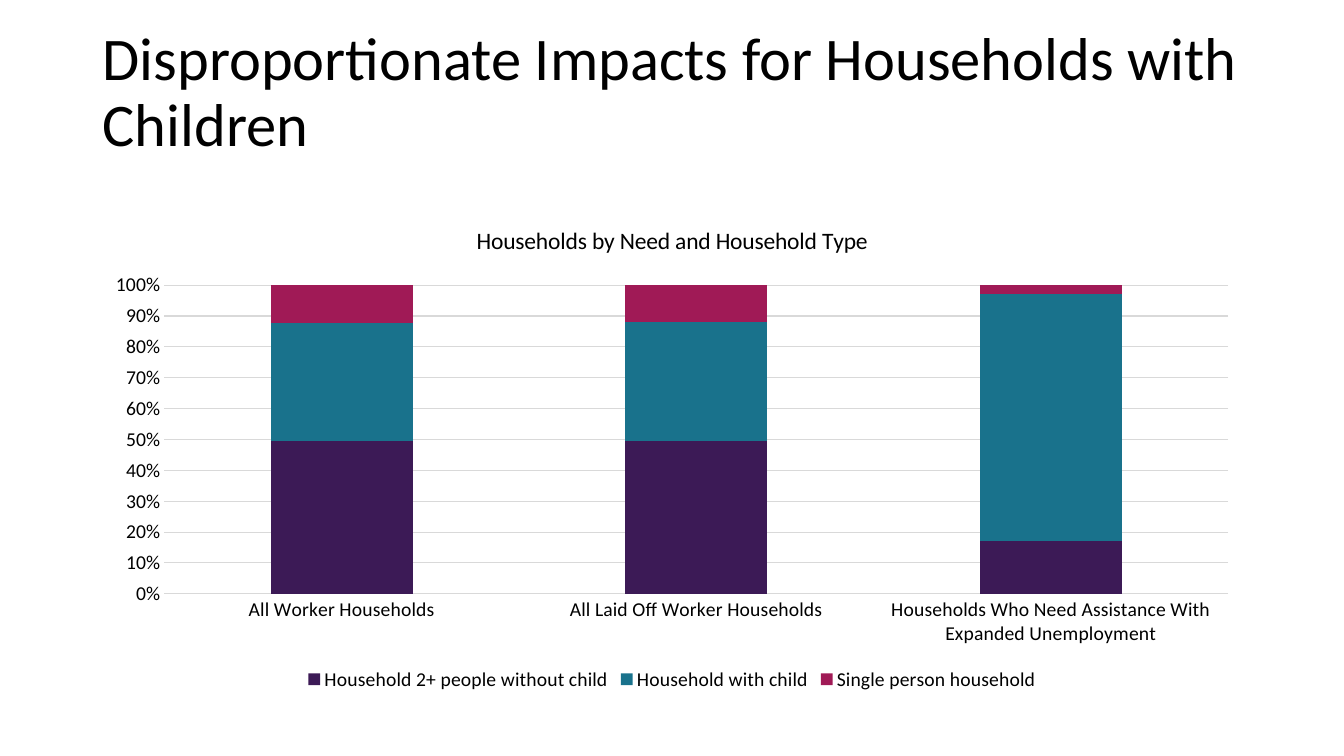
from pptx import Presentation
from pptx.chart.data import CategoryChartData
from pptx.dml.color import RGBColor
from pptx.enum.chart import XL_CHART_TYPE, XL_LEGEND_POSITION, XL_TICK_MARK
from pptx.enum.text import MSO_ANCHOR
from pptx.util import Inches, Pt

COLORS = {
    "text": "000000",
    "grid": "D9D9D9",
    "without_child": "3C1A56",
    "with_child": "19728C",
    "single": "A01A56",
}

HOUSEHOLDS = [
    "All Worker Households",
    "All Laid Off Worker Households",
    "Households Who Need Assistance With Expanded Unemployment",
]
HOUSEHOLD_TYPES = [
    ("Household 2+ people without child", (49, 50, 17), "without_child"),
    ("Household with child", (38, 39, 80), "with_child"),
    ("Single person household", (12, 12, 3), "single"),
]


def color(name):
    return RGBColor.from_string(COLORS[name])


def style_font(font, size, fill="text", name="Calibri", bold=False):
    font.size = Pt(size)
    font.name = name
    font.bold = bold
    font.color.rgb = color(fill)


def write(frame, text, size, line_spacing=None, **style):
    paragraph = frame.paragraphs[0]
    paragraph.line_spacing = line_spacing
    run = paragraph.add_run()
    run.text = text
    style_font(run.font, size, **style)


class HouseholdSlide:
    """Places elements by shares of the slide's width and height."""

    def __init__(self, deck, label_size=14):
        self.width, self.height = deck.slide_width, deck.slide_height
        self.slide = deck.slides.add_slide(deck.slide_layouts[6])
        self.label_size = label_size

    def area(self, left, top, width, height):
        return (int(left * self.width), int(top * self.height),
                int(width * self.width), int(height * self.height))

    def heading(self, text, area, size):
        frame = self.slide.shapes.add_textbox(*self.area(*area)).text_frame
        frame.word_wrap = True
        frame.vertical_anchor = MSO_ANCHOR.BOTTOM
        write(frame, text, size, line_spacing=0.9)

    def grid_line(self, line):
        line.color.rgb = color("grid")
        line.width = Pt(0.75)

    def stacked_columns(self, title, categories, series, area):
        data = CategoryChartData(number_format="0")
        data.categories = categories
        for name, shares, _ in series:
            data.add_series(name, shares)
        chart = self.slide.shapes.add_chart(
            XL_CHART_TYPE.COLUMN_STACKED_100, *self.area(*area), data).chart
        style_font(chart.font, self.label_size)

        # Chart title and legend
        write(chart.chart_title.text_frame, title, 1.2 * self.label_size)
        chart.chart_title.include_in_layout = False
        chart.has_legend = True
        chart.legend.position = XL_LEGEND_POSITION.BOTTOM
        chart.legend.include_in_layout = False
        style_font(chart.legend.font, self.label_size)

        # Axes
        for axis in (chart.category_axis, chart.value_axis):
            axis.major_tick_mark = XL_TICK_MARK.NONE
            axis.minor_tick_mark = XL_TICK_MARK.NONE
            style_font(axis.tick_labels.font, self.label_size)
        self.grid_line(chart.category_axis.format.line)
        self.grid_line(chart.value_axis.major_gridlines.format.line)
        chart.value_axis.format.line.fill.background()
        chart.value_axis.major_unit = 0.1
        chart.value_axis.tick_labels.number_format = "0%"
        chart.value_axis.tick_labels.number_format_is_linked = False

        # Columns
        plot = chart.plots[0]
        plot.gap_width = 150
        plot.overlap = 100
        plot.vary_by_categories = False
        for column, (_, _, fill) in zip(plot.series, series):
            column.format.fill.solid()
            column.format.fill.fore_color.rgb = color(fill)
            column.invert_if_negative = False


def main():
    deck = Presentation()
    deck.slide_width, deck.slide_height = Inches(13.33), Inches(7.5)
    page = HouseholdSlide(deck)
    margin = 0.069
    content = 1 - 2 * margin

    # Heading
    page.heading("Disproportionate Impacts for Households with Children",
                 (margin, 0.081, content, 0.136), size=43.2)

    # Household mix by need
    page.stacked_columns("Households by Need and Household Type",
                         HOUSEHOLDS, HOUSEHOLD_TYPES,
                         (margin, 0.272, content, 0.648))
    deck.save("out.pptx")


if __name__ == "__main__":
    main()
